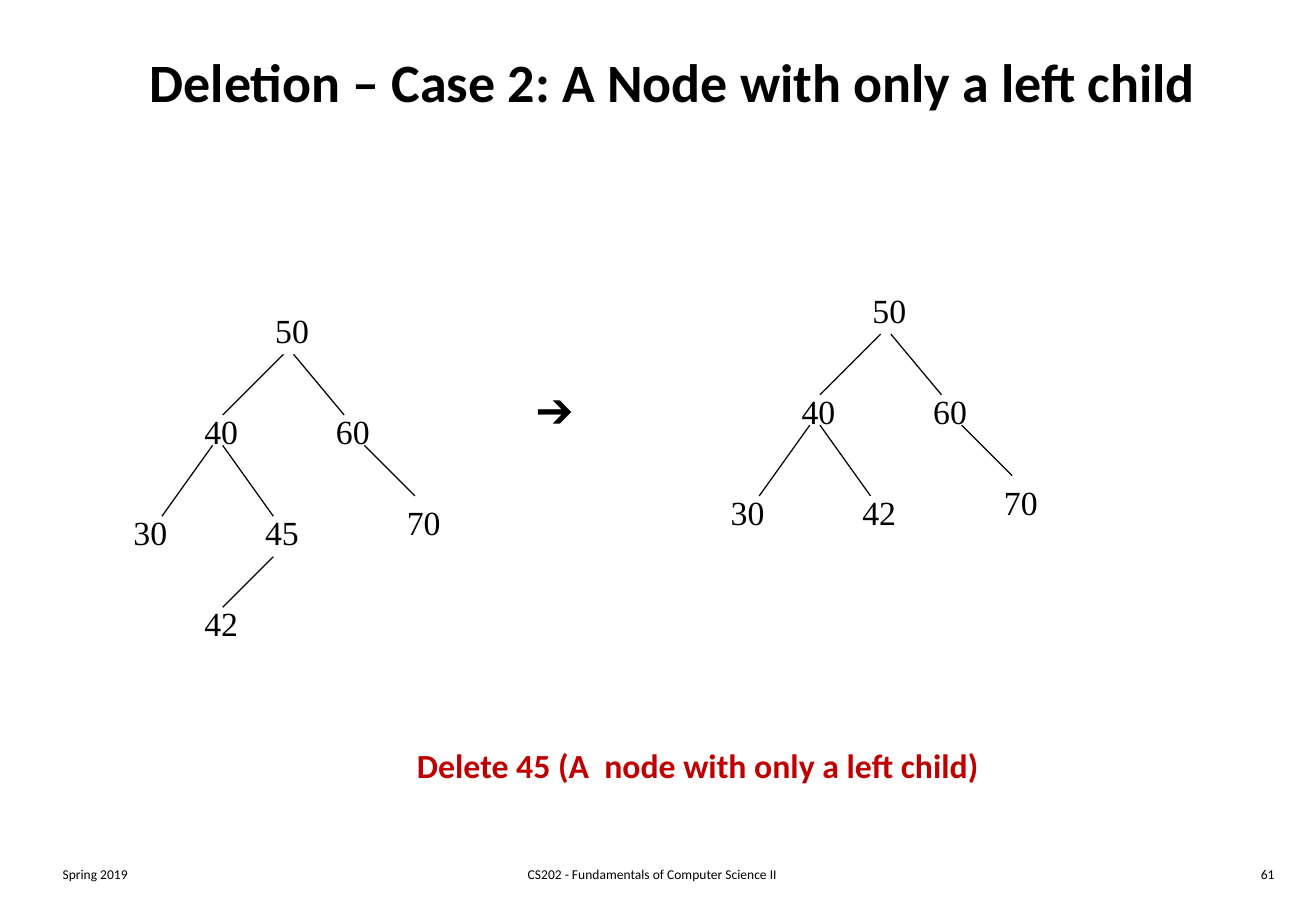
from lxml import etree
from pptx import Presentation
from pptx.dml.color import RGBColor
from pptx.enum.shapes import MSO_CONNECTOR
from pptx.enum.text import MSO_ANCHOR, PP_ALIGN
from pptx.oxml.ns import qn
from pptx.util import Pt

BLACK = RGBColor(0, 0, 0)
RED = RGBColor(0xC0, 0, 0)
SANS, SERIF = "Calibri", "Times New Roman"
LEFT, CENTER, RIGHT = PP_ALIGN.LEFT, PP_ALIGN.CENTER, PP_ALIGN.RIGHT
MIDDLE = MSO_ANCHOR.MIDDLE
STRAIGHT = MSO_CONNECTOR.STRAIGHT

# Node places and edge ends, in points from the corner of the root
TOP, LOW, RIGHT_LEAF, LEFT_LEAF, MID_LEAF, DEEP = (
    (0, 0), (36, 60), (78, 114), (-84, 120), (-6, 120), (-42, 174))
LEFT_KID = (-42, 60)
NODES = [("50", TOP), ("40", LEFT_KID), ("60", LOW),
         ("70", RIGHT_LEAF), ("30", LEFT_LEAF)]
EDGES = [(12, 30, -24, 66), (18, 30, 48, 66), (60, 84, 90, 114),
         (-24, 84, 6, 126), (-30, 84, -60, 126)]
DEEP_EDGE = (6, 150, -24, 180)


class Deck:
    def __init__(self, wide, high):
        self.prs = Presentation()
        self.prs.slide_width, self.prs.slide_height = Pt(wide), Pt(high)
        self.slide = self.prs.slides.add_slide(self.prs.slide_layouts[5])

    def style(self, frame, text, size, face, color, align, bold):
        frame.text = text
        para = frame.paragraphs[0]
        para.alignment = align
        font = para.font
        font.size, font.name, font.bold = Pt(size), face, bold
        font.color.rgb = color

    def title(self, text, x, y, w, h):
        shape = self.slide.shapes.title
        shape.left, shape.top, shape.width, shape.height = map(Pt, (x, y, w, h))
        shape.text_frame.vertical_anchor = MIDDLE
        self.style(shape.text_frame, text, 32, SANS, BLACK, CENTER, True)

    def text(self, text, x, y, w, h, size, face=SANS, color=BLACK,
             align=LEFT, bold=False, wrap=False, home=None):
        shapes = (home or self.slide).shapes
        frame = shapes.add_textbox(*map(Pt, (x, y, w, h))).text_frame
        frame.word_wrap = wrap
        self.style(frame, text, size, face, color, align, bold)

    def line(self, x1, y1, x2, y2, home):
        edge = home.shapes.add_connector(STRAIGHT, *map(Pt, (x1, y1, x2, y2)))
        edge.line.color.rgb = BLACK
        edge.line.width = Pt(0.75)
        etree.SubElement(edge.line._get_or_add_ln().getparent(),
                         qn("a:effectLst"))

    def tree(self, x, y, nodes, edges):
        group = self.slide.shapes.add_group_shape()
        for x1, y1, x2, y2 in edges:
            self.line(x + x1, y + y1, x + x2, y + y2, group)
        for key, (dx, dy) in nodes:
            self.text(key, x + dx, y + dy, 34.5, 31, 20, SERIF, home=group)


def main():
    deck = Deck(780, 540)
    deck.title("Deletion – Case 2: A Node with only a left child",
               30, 12, 738, 72)

    # Trees before and after the deletion
    deck.tree(156, 180, NODES + [("45", MID_LEAF), ("42", DEEP)],
              EDGES + [DEEP_EDGE])
    deck.text("➔", 311, 225.5, 40, 36, 24, SERIF)
    deck.tree(510, 168, NODES + [("42", MID_LEAF)], EDGES)

    # Caption
    deck.text("Delete 45 (A  node with only a left child)",
              240, 438, 350.5, 31.5, 20, color=RED, bold=True)

    # Footer
    for text, x, w, align in [
            ("Spring 2019", 30, 162.5, LEFT),
            ("CS202 - Fundamentals of Computer Science II", 240.5, 292.5, CENTER),
            ("61", 600, 162.5, RIGHT)]:
        deck.text(text, x, 510, w, 18, 8, align=align, wrap=True)

    deck.prs.save("out.pptx")


if __name__ == "__main__":
    main()
